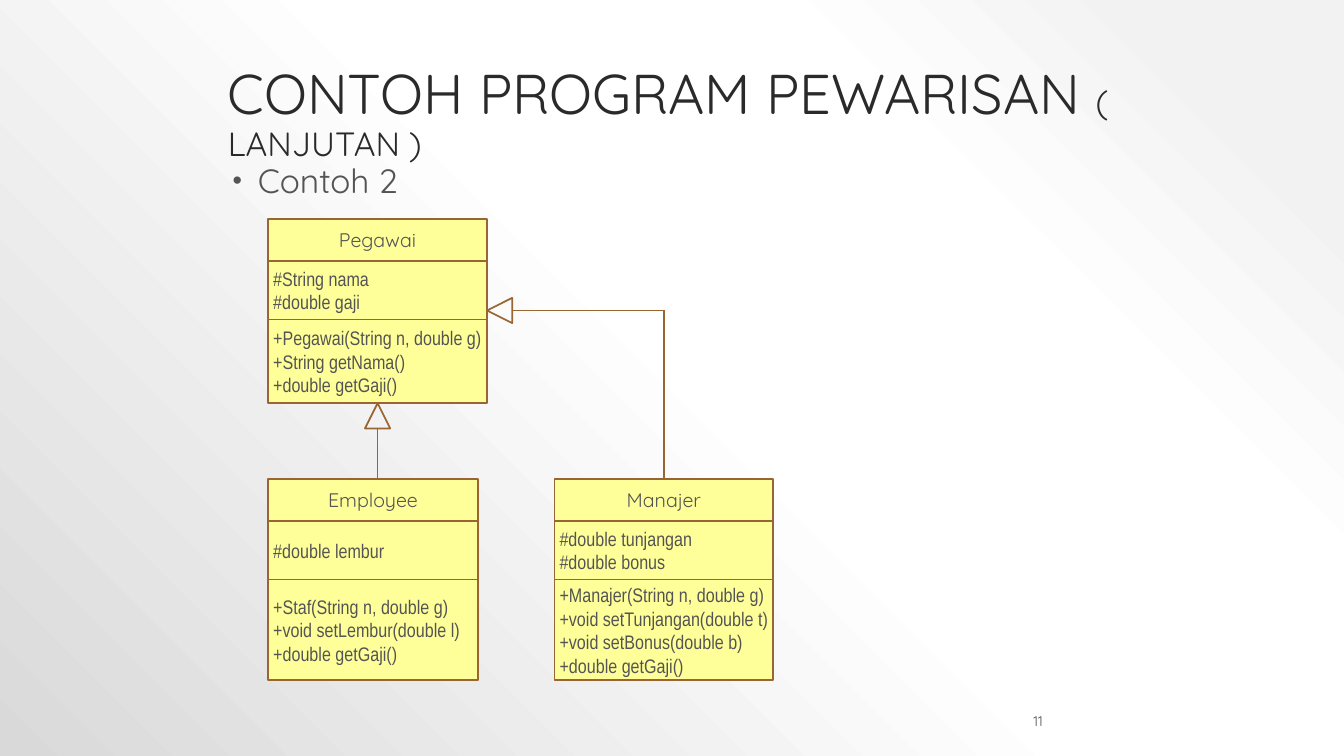
from lxml import etree
from pptx import Presentation
from pptx.dml.color import RGBColor
from pptx.enum.shapes import MSO_CONNECTOR as CONN, MSO_SHAPE as SHAPE
from pptx.enum.text import MSO_ANCHOR as ANCHOR, PP_ALIGN as ALIGN
from pptx.oxml.ns import qn
from pptx.util import Inches, Pt

GRAY = "545454"
BROWN = "996633"
YELLOW = "FFFF99"
HEAD_H, ATTR_H = 0.42, 0.58
ARROW = 0.25


def rgb(value):
    return RGBColor.from_string(value)


def box(*lengths):
    return [Inches(n) for n in lengths]


def add_text(p, text, size=14, font="Quicksand", color=GRAY, align=None, spacing=None):
    r = p.add_run()
    r.text = text
    r.font.size = Pt(size)
    r.font.name = font
    r.font.color.rgb = rgb(color)
    if align is not None:
        p.alignment = align
    if spacing is not None:
        p.line_spacing = spacing
    return r


def add_background(s):
    s.background.fill.gradient()
    grad = s.element.find(".//" + qn("a:gradFill"))
    for child in list(grad):
        grad.remove(child)
    stops = etree.SubElement(grad, qn("a:gsLst"))
    for pos, color in ((10, "F2F2F2"), (28, "FFFFFF"), (48, "FFFFFF"), (100, "D9D9D9")):
        stop = etree.SubElement(stops, qn("a:gs"), pos=str(pos * 1000))
        etree.SubElement(stop, qn("a:srgbClr"), val=color)
    path = etree.SubElement(grad, qn("a:path"), path="circle")
    etree.SubElement(path, qn("a:fillToRect"), l="100000", b="100000")


def add_title(s, x, y, w, h):
    sp = s.shapes.title
    sp.left, sp.top, sp.width, sp.height = box(x, y, w, h)
    tf = sp.text_frame
    tf.word_wrap = True
    tf.vertical_anchor = ANCHOR.BOTTOM
    p = tf.paragraphs[0]
    add_text(p, "CONTOH PROGRAM PEWARISAN ", size=40, color="2A2A2A", align=ALIGN.LEFT, spacing=0.9)
    add_text(p, "( LANJUTAN )", size=24, color="2A2A2A")


def add_bullet(s, text, x, y, w, h):
    tf = s.shapes.add_textbox(*box(x, y, w, h)).text_frame
    tf.word_wrap = True
    p = tf.paragraphs[0]
    add_text(p, text, size=24, spacing=0.9)
    p.space_before = Pt(18)
    pPr = p._p.get_or_add_pPr()
    pPr.set("marL", str(Inches(0.3)))
    pPr.set("indent", str(Inches(-0.25)))
    color = etree.SubElement(pPr, qn("a:buClr"))
    etree.SubElement(color, qn("a:srgbClr"), val=GRAY)
    etree.SubElement(pPr, qn("a:buSzPct"), val="80000")
    etree.SubElement(pPr, qn("a:buFont"), typeface="Arial")
    etree.SubElement(pPr, qn("a:buChar"), char="•")


def add_page_number(s, number, x, y, w, h):
    tf = s.shapes.add_textbox(*box(x, y, w, h)).text_frame
    tf.word_wrap = True
    tf.vertical_anchor = ANCHOR.MIDDLE
    add_text(tf.paragraphs[0], number, size=10, align=ALIGN.RIGHT)


def add_outline(s, kind, x, y, w, h, fill=None):
    sp = s.shapes.add_shape(kind, *box(x, y, w, h))
    sp.shadow.inherit = False
    if fill:
        sp.fill.solid()
        sp.fill.fore_color.rgb = rgb(fill)
    else:
        sp.fill.background()
    sp.line.color.rgb = rgb(BROWN)
    sp.line.width = Pt(1.25)
    return sp


def add_class(s, name, attributes, methods, x, y, w, h):
    sections = (([name], 0, HEAD_H), (attributes, HEAD_H, ATTR_H),
                (methods, HEAD_H + ATTR_H, h - HEAD_H - ATTR_H))
    cells = []
    for lines, offset, height in sections:
        sp = add_outline(s, SHAPE.RECTANGLE, x, y + offset, w, height, YELLOW)
        tf = sp.text_frame
        tf.word_wrap = False
        tf.vertical_anchor = ANCHOR.MIDDLE
        is_head = offset == 0
        if not is_head:
            tf.margin_left = tf.margin_right = tf.margin_top = tf.margin_bottom = Inches(0.05)
        for i, line in enumerate(lines):
            p = tf.add_paragraph() if i else tf.paragraphs[0]
            add_text(p, line, font="Quicksand" if is_head else "Arial Narrow",
                     align=ALIGN.CENTER if is_head else ALIGN.LEFT)
        cells.append(sp)
    return cells[0]


def add_line(s, x1, y1, x2, y2):
    line = s.shapes.add_connector(CONN.STRAIGHT, *box(x1, y1, x2, y2))
    line.line.color.rgb = rgb(BROWN)
    line.line.width = Pt(1.25)
    etree.SubElement(line._element.spPr, qn("a:effectLst"))
    return line


def add_inheritance(s, manager, x, y, w, h, child_x, child_y):
    mid, right, turn_y = x + w / 2, x + w, 3.08
    add_outline(s, SHAPE.ISOSCELES_TRIANGLE, mid - ARROW / 2, y + h, ARROW, ARROW)
    add_line(s, mid, y + h + ARROW, mid, child_y)
    head = add_outline(s, SHAPE.ISOSCELES_TRIANGLE, right, turn_y - ARROW / 2, ARROW, ARROW)
    head.rotation = 270
    add_line(s, right + ARROW, turn_y, child_x, turn_y)
    add_line(s, child_x, child_y, child_x, turn_y).begin_connect(manager, 0)


def add_diagram(s, x, y):
    w, h, child_h = 2.17, 1.83, 2
    child_y, manager_x = y + 2.58, x + 2.84
    add_class(s, "Pegawai", ["#String nama", "#double gaji"],
              ["+Pegawai(String n, double g)", "+String getNama()", "+double getGaji()"],
              x, y, w, h)
    add_class(s, "Employee", ["#double lembur"],
              ["+Staf(String n, double g)", "+void setLembur(double l)", "+double getGaji()"],
              x, child_y, 2.08, child_h)
    manager = add_class(s, "Manajer", ["#double tunjangan", "#double bonus"],
                        ["+Manajer(String n, double g)", "+void setTunjangan(double t)",
                         "+void setBonus(double b)", "+double getGaji()"],
                        manager_x, child_y, w, child_h)
    add_inheritance(s, manager, x, y, w, h, manager_x + w / 2, child_y)


def main():
    prs = Presentation()
    prs.slide_width, prs.slide_height = box(13.33, 7.5)
    s = prs.slides.add_slide(prs.slide_layouts[5])
    add_background(s)
    add_title(s, 2.16, 0.42, 9, 1.25)
    add_bullet(s, "Contoh 2", 2.16, 1.58, 9, 0.5)
    add_diagram(s, 2.66, 2.17)
    add_page_number(s, "11", 8.91, 7.05, 1.53, 0.2)
    prs.save("out.pptx")


if __name__ == "__main__":
    main()
